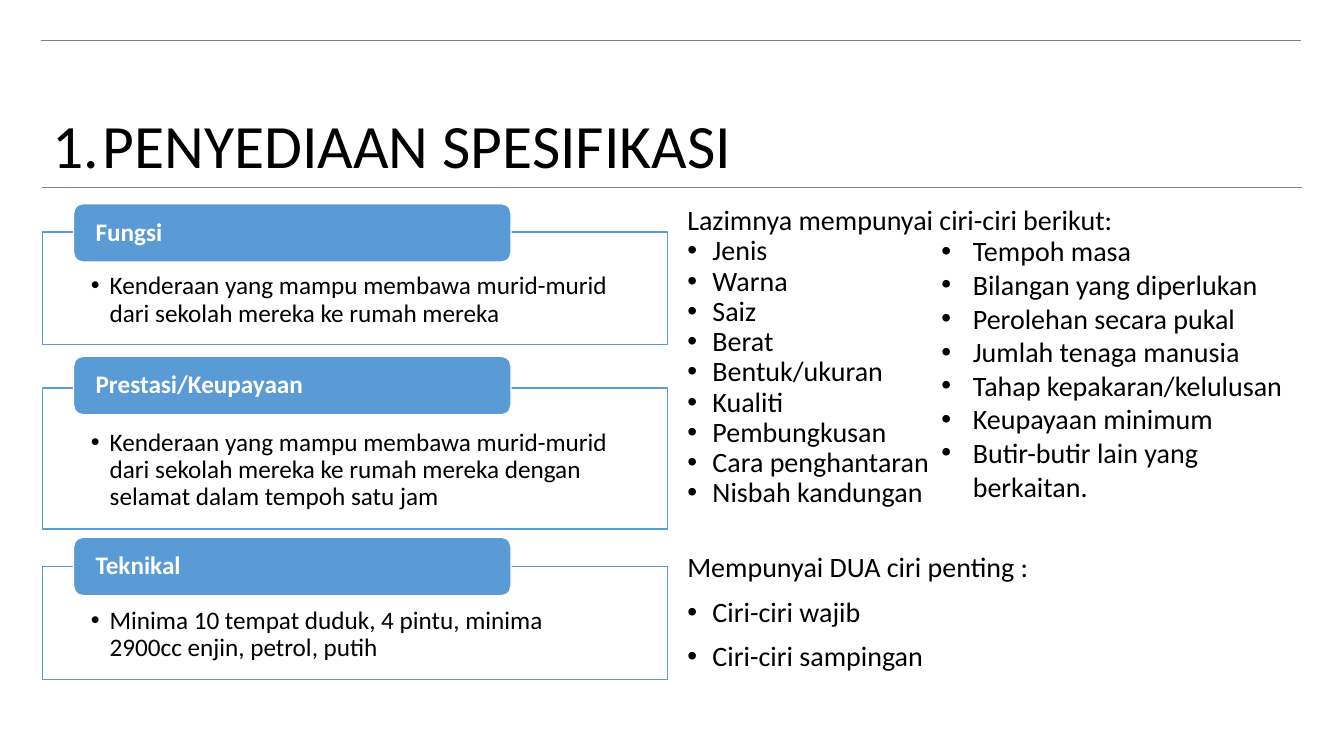
import pptx
import pptx.util
import pptx.dml.color
import pptx.enum.shapes
import pptx.enum.text
import pptx.oxml.ns
import lxml.etree

Pt = pptx.util.Pt
SHAPES = pptx.enum.shapes.MSO_SHAPE
ANCHOR = pptx.enum.text.MSO_ANCHOR
BLACK = pptx.dml.color.RGBColor(0x00, 0x00, 0x00)
WHITE = pptx.dml.color.RGBColor(0xFF, 0xFF, 0xFF)
GREY = pptx.dml.color.RGBColor(0x80, 0x80, 0x80)
BLUE = pptx.dml.color.RGBColor(0x5B, 0x9B, 0xD5)
qn = pptx.oxml.ns.qn


def write_text(shape, lines, size=20, color=BLACK, bold=False, bullet=False, indent=0,
               spacing=0.9, before=0, anchor=ANCHOR.TOP, insets=(7.2, 3.6, 7.2, 3.6)):
    """Append paragraphs to a shape; before may be one value or one per line."""
    frame = shape.text_frame
    frame.word_wrap = True
    frame.vertical_anchor = anchor
    frame.margin_left, frame.margin_top, frame.margin_right, frame.margin_bottom = map(Pt, insets)
    for line in lines:
        first = not frame.text
        paragraph = frame.paragraphs[0] if first else frame.add_paragraph()
        paragraph.text = line
        paragraph.alignment = pptx.enum.text.PP_ALIGN.LEFT
        paragraph.line_spacing = spacing
        paragraph.space_before = Pt(0 if first else before)
        if bullet:
            properties = paragraph._p.get_or_add_pPr()
            properties.set("marL", str(Pt(indent)))
            properties.set("indent", str(-Pt(indent)))
            lxml.etree.SubElement(properties, qn("a:buFont"), typeface="Arial")
            lxml.etree.SubElement(properties, qn("a:buChar"), char="•")
        paragraph.font.name = "Calibri"
        paragraph.font.size = Pt(size)
        paragraph.font.bold = bold
        paragraph.font.color.rgb = color


def add_box(kind, left, top, width, height, fill, line):
    shape = slide.shapes.add_shape(kind, Pt(left), Pt(top), Pt(width), Pt(height))
    shape.shadow.inherit = False
    shape.fill.solid()
    shape.fill.fore_color.rgb = fill
    shape.line.color.rgb = line
    shape.line.width = Pt(1)
    return shape


presentation = pptx.Presentation()
presentation.slide_width, presentation.slide_height = Pt(960), Pt(540)
slide = presentation.slides.add_slide(presentation.slide_layouts[6])

# Rules above and below the title
for left, y in ((30.24, 133.92), (29.52, 28.8)):
    rule = slide.shapes.add_connector(
        pptx.enum.shapes.MSO_CONNECTOR.STRAIGHT, Pt(left), Pt(y), Pt(left + 900), Pt(y))
    rule.line.color.rgb = GREY
    rule.line.width = Pt(1)
    lxml.etree.SubElement(rule._element.spPr, qn("a:effectLst"))

# Title
title = slide.shapes.add_textbox(Pt(30.24), Pt(28.8), Pt(900), Pt(104.4))
write_text(title, ["1.\tPENYEDIAAN SPESIFIKASI"], size=44, anchor=ANCHOR.BOTTOM)

# Specification cards: heading, heading top, frame top, frame height, description
cards = [
    ("Fungsi", 145.44, 165.6, 80.64,
     "Kenderaan yang mampu membawa murid-murid dari sekolah mereka ke rumah mereka"),
    ("Prestasi/Keupayaan", 254.5, 277.2, 100.8,
     "Kenderaan yang mampu membawa murid-murid dari sekolah mereka ke rumah mereka "
     "dengan selamat dalam tempoh satu jam"),
    ("Teknikal", 383.76, 404.64, 80.64,
     "Minima 10 tempat duduk, 4 pintu, minima 2900cc enjin, petrol, putih"),
]
for heading, heading_top, frame_top, frame_height, description in cards:
    card = add_box(SHAPES.RECTANGLE, 30.24, frame_top, 446.4, frame_height, WHITE, BLUE)
    color = card._element.spPr.find(qn("a:solidFill"))[0]
    lxml.etree.SubElement(color, qn("a:alpha"), val="90000")
    write_text(card, [description], size=18, bullet=True, indent=13.5,
               insets=(34.6, 29.5, 34.6, 10))
    label = add_box(SHAPES.ROUNDED_RECTANGLE, 52.56, heading_top, 312.48, 41.76, BLUE, WHITE)
    write_text(label, [heading], size=18, color=WHITE, bold=True,
               anchor=ANCHOR.MIDDLE, insets=(13.7, 0, 13.7, 0))

# Characteristics, left list and closing points
features = slide.shapes.add_textbox(Pt(483.84), Pt(144), Pt(446.4), Pt(342.72))
write_text(features, ["Lazimnya mempunyai ciri-ciri berikut:"])
write_text(features, ["Jenis", "Warna", "Saiz", "Berat", "Bentuk/ukuran", "Kualiti",
                      "Pembungkusan", "Cara penghantaran", "Nisbah kandungan"],
           bullet=True, indent=18)
write_text(features, ["Mempunyai DUA ciri penting :"], before=32)
write_text(features, ["Ciri-ciri wajib", "Ciri-ciri sampingan"],
           bullet=True, indent=18, before=10)

# Characteristics, right list
more_features = slide.shapes.add_textbox(Pt(665.28), Pt(163.44), Pt(279.36), Pt(200.88))
write_text(more_features, ["Tempoh masa", "Bilangan yang diperlukan", "Perolehan secara pukal",
                           "Jumlah tenaga manusia", "Tahap kepakaran/kelulusan",
                           "Keupayaan minimum", "Butir-butir lain yang berkaitan."],
           bullet=True, indent=22.5, spacing=1.0)

presentation.save("out.pptx")
